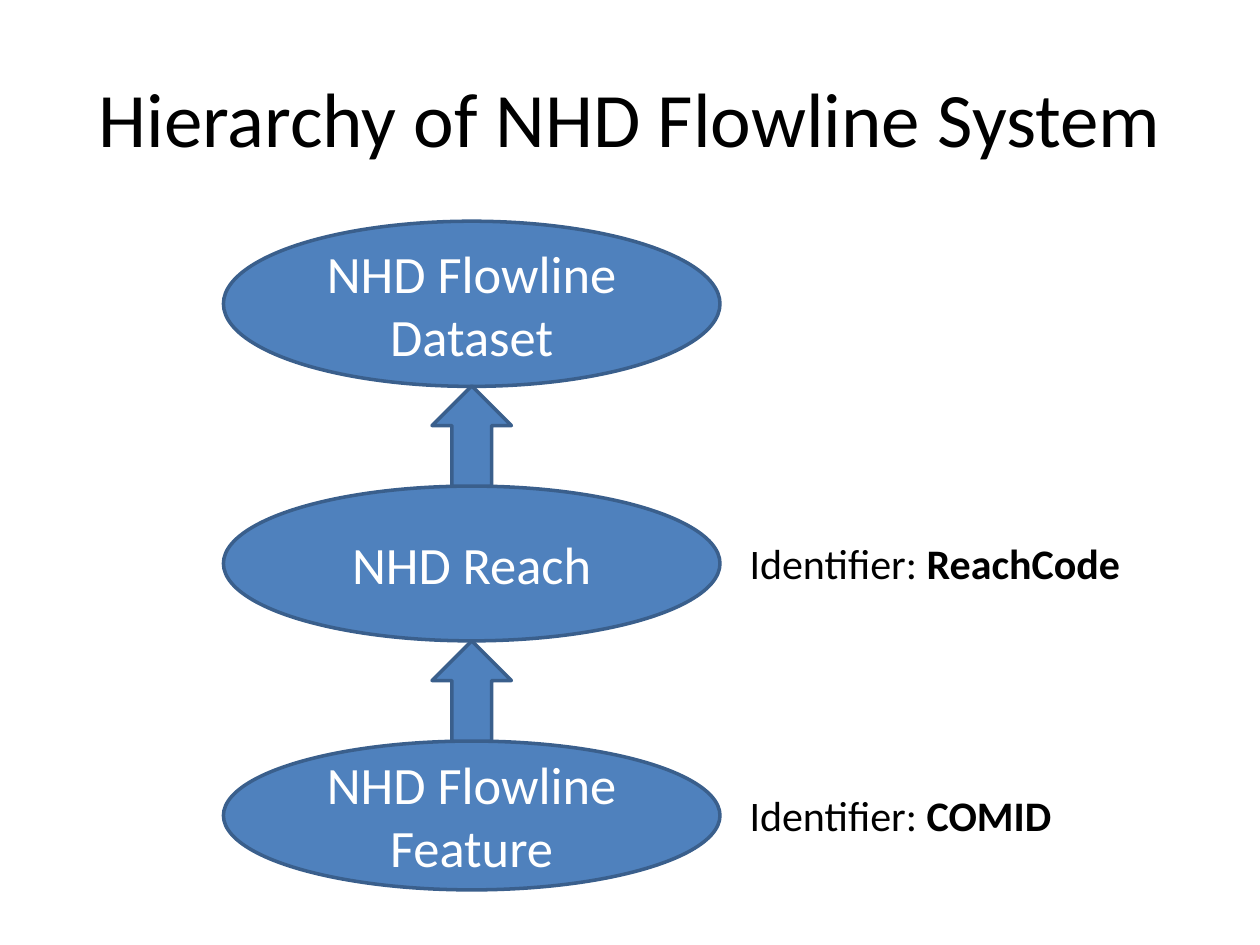
from pptx import Presentation
from pptx.dml.color import RGBColor
from pptx.enum.shapes import MSO_SHAPE
from pptx.enum.text import MSO_ANCHOR, PP_ALIGN
from pptx.util import Cm, Pt

COLORS = {"fill": "4F81BD", "outline": "3A5F8C", "dark": "000000", "light": "FFFFFF"}
CENTER_X = 9.51
LEVEL_WIDTH = 10.01
ARROW_WIDTH, ARROW_HEIGHT = 1.6, 2.02
LEVELS = [
    ("NHD Flowline Dataset", 4.46, 3.33, None),
    ("NHD Reach", 9.8, 3.12, "ReachCode"),
    ("NHD Flowline Feature", 14.94, 3.0, "COMID"),
]


def color(name):
    """Return the palette colour with this name."""
    return RGBColor.from_string(COLORS[name])


def write(frame, runs, size, ink, align, anchor):
    """Fill a text frame with one paragraph of (text, bold) runs."""
    for attribute, value in {"word_wrap": True, "vertical_anchor": anchor}.items():
        setattr(frame, attribute, value)
    paragraph = frame.paragraphs[0]
    paragraph.alignment = align
    for text, bold in runs:
        run = paragraph.add_run()
        run.text = text
        font_format = {"name": "Calibri", "size": Pt(size), "bold": bold}
        for attribute, value in font_format.items():
            setattr(run.font, attribute, value)
        run.font.color.rgb = color(ink)


def add_label(slide, box, runs, size, align=PP_ALIGN.LEFT, anchor=MSO_ANCHOR.TOP):
    """Add dark text in a box given in centimetres."""
    label = slide.shapes.add_textbox(*map(Cm, box))
    write(label.text_frame, runs, size, "dark", align, anchor)


def add_node(slide, preset, top, width, height):
    """Add a filled, outlined shape centred on the hierarchy's axis."""
    node = slide.shapes.add_shape(
        preset, Cm(CENTER_X - width / 2), Cm(top), Cm(width), Cm(height)
    )
    node.shadow.inherit = False
    node.fill.solid()
    node.fill.fore_color.rgb = color("fill")
    node.line.color.rgb = color("outline")
    node.line.width = Pt(2)
    return node


def add_level(slide, name, top, height, identifier):
    """Add one level of the hierarchy and its identifier, if it has one."""
    level = add_node(slide, MSO_SHAPE.OVAL, top, LEVEL_WIDTH, height)
    write(level.text_frame, [(name, False)], 30, "light",
          PP_ALIGN.CENTER, MSO_ANCHOR.MIDDLE)
    if identifier:
        label_top = top + height / 2 - 0.64
        add_label(slide, (14.86, label_top, 9.8, 1.28),
                  [("Identifier: ", False), (identifier, True)], 24)


def main():
    """Build the slide and save it."""
    presentation = Presentation()
    presentation.slide_width, presentation.slide_height = Cm(25.4), Cm(19.05)
    slide = presentation.slides.add_slide(presentation.slide_layouts[6])
    add_label(slide, (1.27, 0.76, 22.86, 3.18),
              [("Hierarchy of NHD Flowline System", False)], 44,
              PP_ALIGN.CENTER, MSO_ANCHOR.MIDDLE)
    for level in LEVELS:
        add_level(slide, *level)
    for _, top, _, _ in LEVELS[1:]:
        add_node(slide, MSO_SHAPE.UP_ARROW, top - ARROW_HEIGHT,
                 ARROW_WIDTH, ARROW_HEIGHT)
    presentation.save("out.pptx")


if __name__ == "__main__":
    main()
